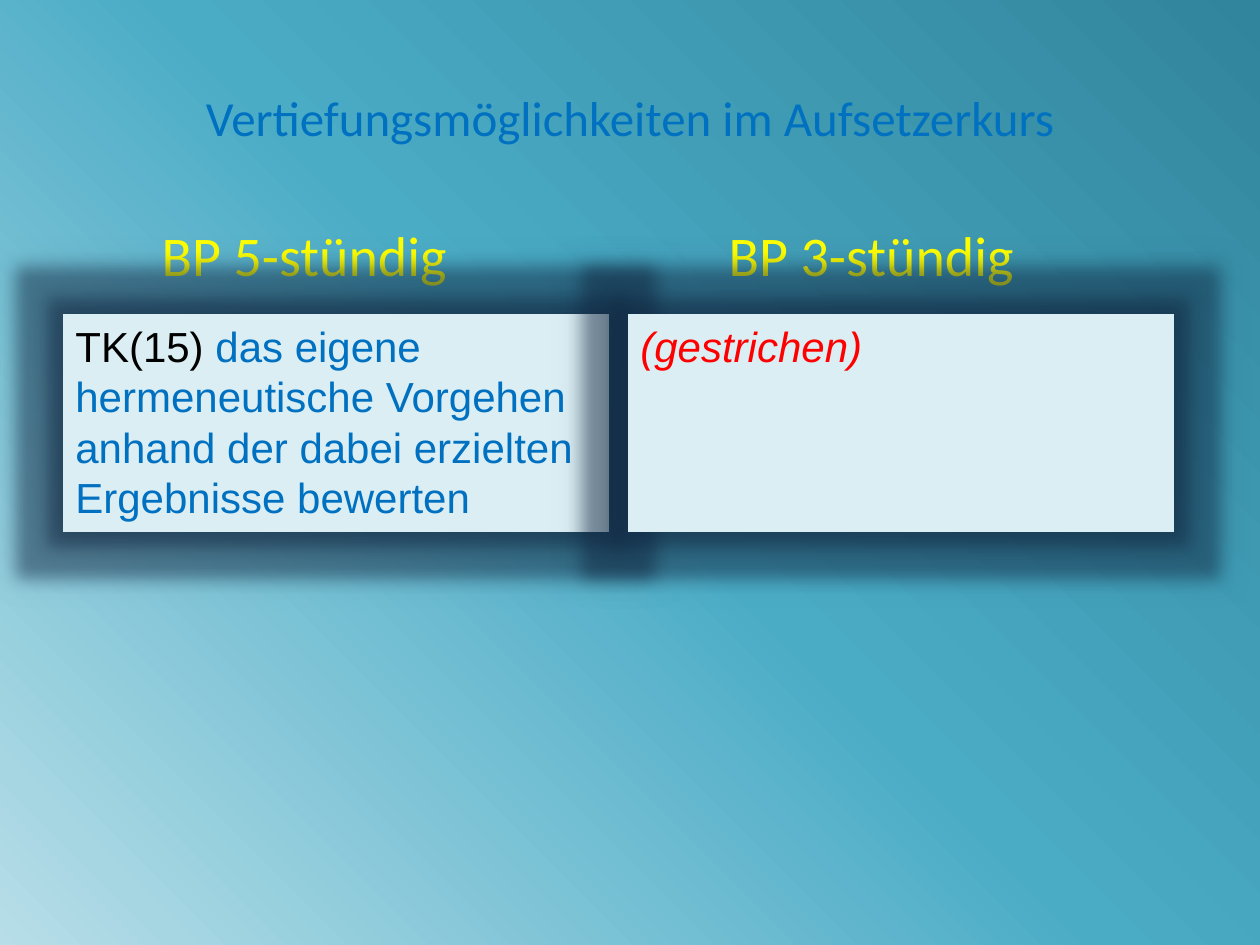
import pptx
import pptx.util
import pptx.oxml
import pptx.oxml.ns
import pptx.dml.color
import pptx.enum.shapes
import pptx.enum.text

SCALE = 914400 / 126
NAMESPACE = pptx.oxml.ns.nsdecls("a")
COLORS = {
    "blue": "0070C0", "yellow": "FFFF00", "black": "000000", "red": "FF0000",
    "box": "DBEEF4", "glow": "10253F",
    "dark": "31859C", "teal": "4BACC6", "light": "B7DEE8",
}


def px(length):
    return pptx.util.Emu(round(length * SCALE))


def add_run(paragraph, text, color, **formats):
    run = paragraph.add_run()
    run.text = text
    run.font.color.rgb = pptx.dml.color.RGBColor.from_string(COLORS[color])
    for name, value in formats.items():
        setattr(run.font, name, value)


presentation = pptx.Presentation()
presentation.slide_width = px(1260)
presentation.slide_height = px(945)
slide = presentation.slides.add_slide(presentation.slide_layouts[3])

background = slide.background.fill
background.gradient()
gradient = slide.background._cSld.bg.bgPr.find(pptx.oxml.ns.qn("a:gradFill"))
stops = "".join(
    f'<a:gs pos="{position * 1000}"><a:srgbClr val="{COLORS[color]}"/></a:gs>'
    for position, color in [(0, "dark"), (50, "teal"), (100, "light")]
)
gradient.getparent().replace(gradient, pptx.oxml.parse_xml(
    f'<a:gradFill {NAMESPACE} rotWithShape="1"><a:gsLst>{stops}</a:gsLst>'
    f'<a:lin ang="{135 * 60000}" scaled="0"/></a:gradFill>'
))

title = slide.shapes.title
title.left, title.top, title.width, title.height = px(63), px(38), px(1134), px(157)
title.text_frame.vertical_anchor = pptx.enum.text.MSO_ANCHOR.MIDDLE
paragraph = title.text_frame.paragraphs[0]
paragraph.alignment = pptx.enum.text.PP_ALIGN.CENTER
add_run(paragraph, "Vertiefungsmöglichkeiten im Aufsetzerkurs", "blue",
        name="Calibri", size=pptx.util.Pt(28))

for index, left, text in [(1, 149, "BP 5-stündig"), (2, 716, "BP 3-stündig")]:
    heading = slide.placeholders[index]
    heading.left, heading.top, heading.width, heading.height = px(left), px(214), px(454), px(90)
    paragraph = heading.text_frame.paragraphs[0]
    add_run(paragraph, text, "yellow", name="Calibri", size=pptx.util.Pt(32))
    properties = paragraph._p.get_or_add_pPr()
    properties.set("marL", "0")
    properties.set("indent", "0")
    properties.append(pptx.oxml.parse_xml(f"<a:buNone {NAMESPACE}/>"))

boxes = [
    (63, [("TK(15) ", "black", False),
          ("das eigene hermeneutische Vorgehen anhand der dabei erzielten "
           "Ergebnisse bewerten", "blue", False)]),
    (628, [("(gestrichen)", "red", True)]),
]
for left, runs in boxes:
    box = slide.shapes.add_shape(
        pptx.enum.shapes.MSO_SHAPE.RECTANGLE, px(left), px(314), px(546), px(218))
    box.fill.solid()
    box.fill.fore_color.rgb = pptx.dml.color.RGBColor.from_string(COLORS["box"])
    box.line.fill.background()
    box.shadow.inherit = False
    effects = box._element.spPr.find(pptx.oxml.ns.qn("a:effectLst"))
    for tag, attributes, color, alpha in [
        ("glow", f'rad="{px(31)}"', "glow", 40),
        ("outerShdw", f'blurRad="{px(22)}" algn="ctr" rotWithShape="0"', "glow", 50),
    ]:
        effects.append(pptx.oxml.parse_xml(
            f'<a:{tag} {NAMESPACE} {attributes}><a:srgbClr val="{COLORS[color]}">'
            f'<a:alpha val="{alpha * 1000}"/></a:srgbClr></a:{tag}>'
        ))
    frame = box.text_frame
    frame.word_wrap = True
    frame.vertical_anchor = pptx.enum.text.MSO_ANCHOR.TOP
    paragraph = frame.paragraphs[0]
    paragraph.alignment = pptx.enum.text.PP_ALIGN.LEFT
    for text, color, italic in runs:
        add_run(paragraph, text, color, name="Arial", size=pptx.util.Pt(24), italic=italic)

presentation.save("out.pptx")
